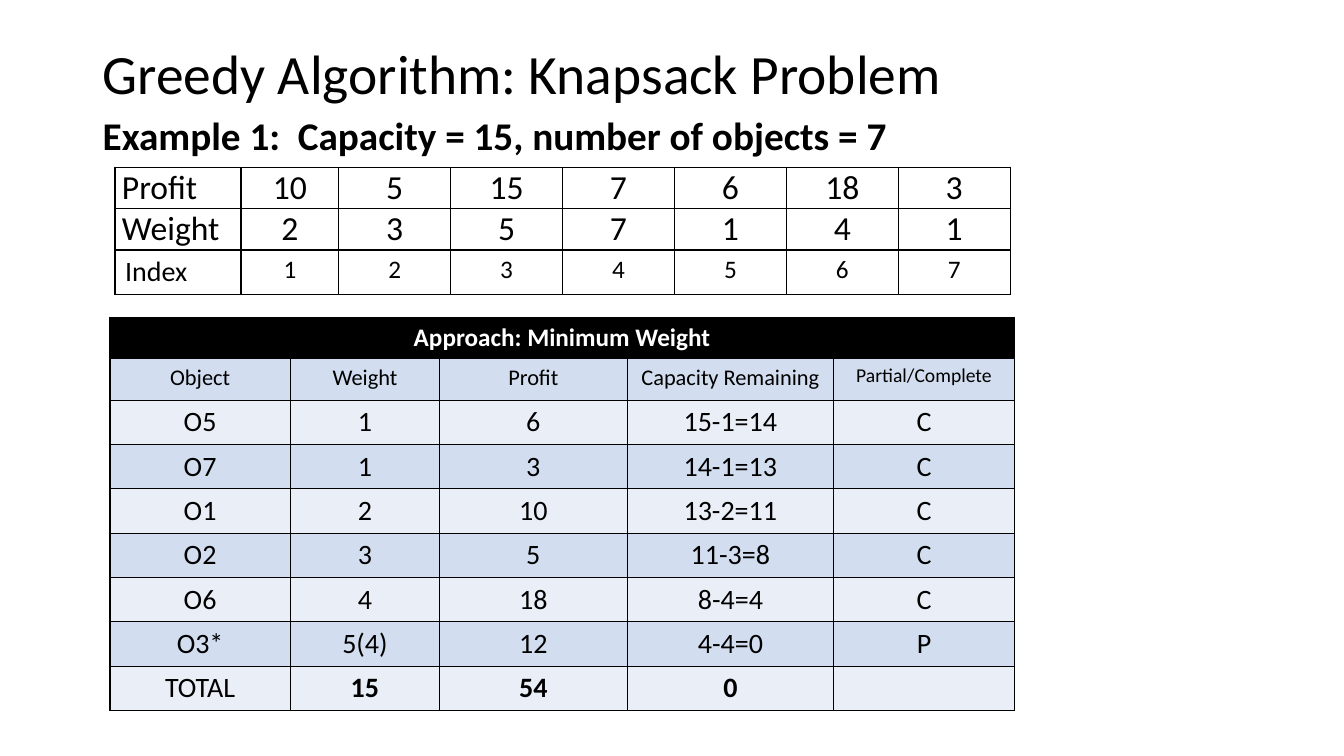
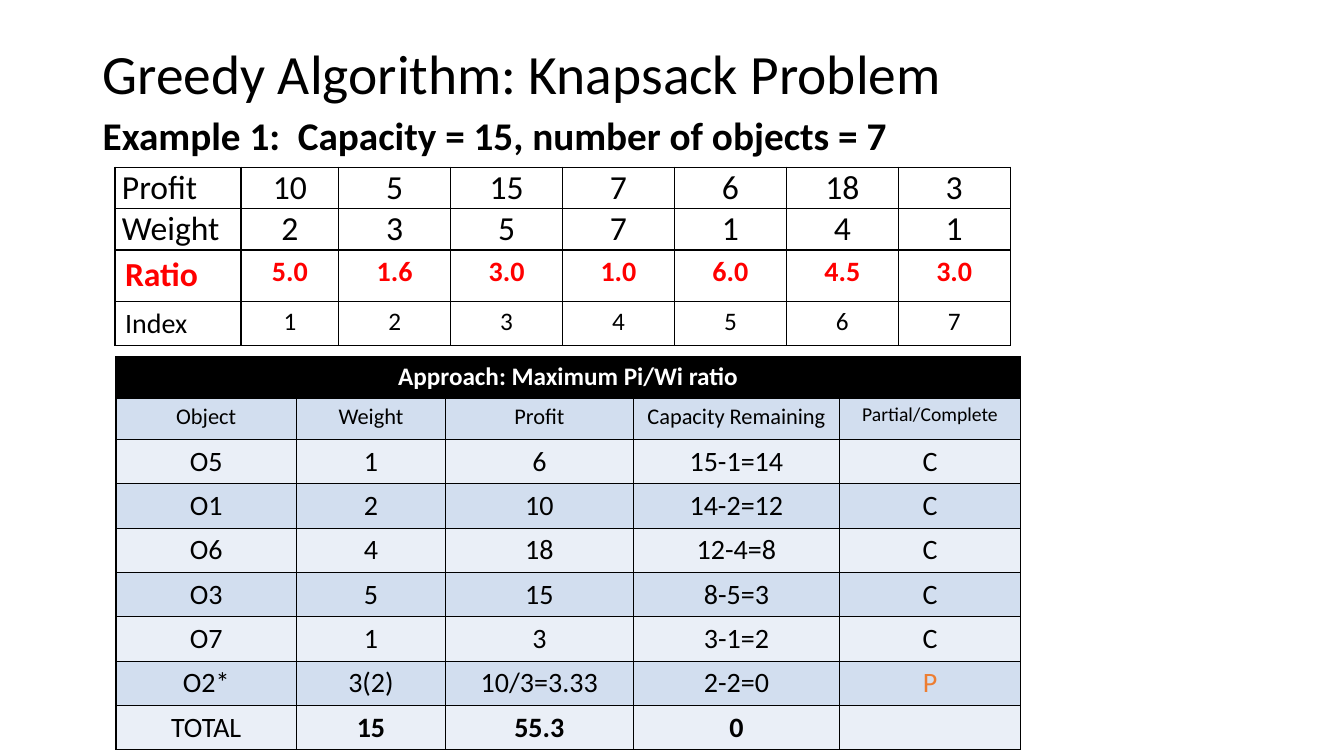
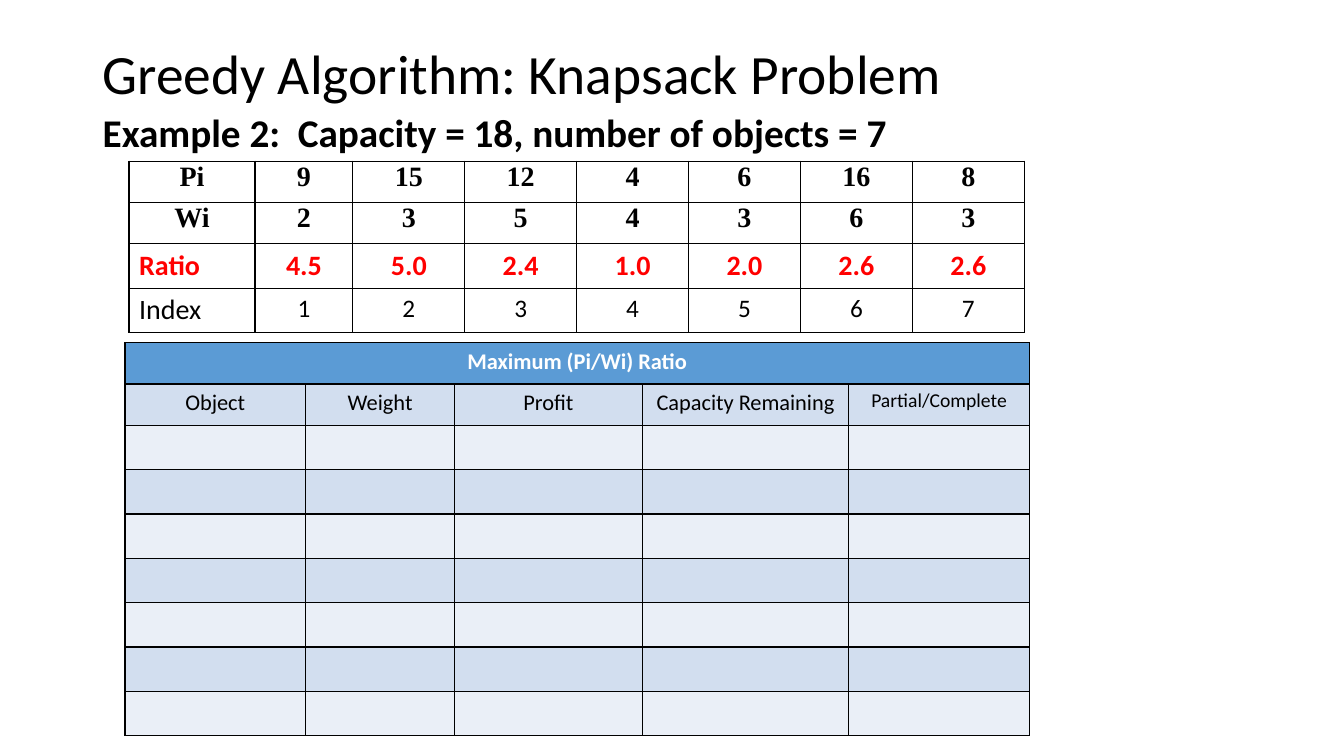
import pptx
import pptx.util
import pptx.dml.color
import pptx.enum.text
import pptx.oxml

Inches = pptx.util.Inches
ALIGN = pptx.enum.text.PP_ALIGN
HUE = {"ink": "000000", "white": "FFFFFF", "red": "FF0000", "blue": "5B9BD5",
       "orange": "ED7D31", "dark": "D2DEEF", "light": "EAEFF7"}
SANS, SERIF = "Calibri", "Times New Roman"
TITLE = "Greedy Algorithm: Knapsack Problem"
HEADS = ["Object", "Weight", "Profit", "Capacity Remaining", "Partial/Complete"]
INDEX = "Index 1 2 3 4 5 6 7"

# Column widths
DATA = [1.25, 0.97] + [1.11] * 6
STEPS = [1.79, 1.48, 1.86, 2.05, 1.79]

# Row styles: height, label size, value size, hue, bold, font, label align, tight
PLAIN = (0.41, 24, 24, "ink", False, SANS, ALIGN.JUSTIFY, True)
BOLD = (0.41, 20, 20, "ink", True, SERIF, ALIGN.CENTER, True)
RATIO = (0.51, 24, 20, "red", True, SANS, ALIGN.LEFT, False)
SMALL = (0.44, 20, 20, "red", True, SANS, ALIGN.LEFT, False)
COUNT = (0.44, 20, 18, "ink", False, SANS, ALIGN.LEFT, False)

# Each slide: example line, then the data table and the steps table
one = [(PLAIN, "Profit 10 5 15 7 6 18 3"), (PLAIN, "Weight 2 3 5 7 1 4 1")]
SLIDES = [
    {"text": "Example 1:  Capacity = 15, number of objects = 7", "top": 1.11,
     "data": (1.14, 1.66), "rows": one + [(COUNT, INDEX)],
     "steps": (1.09, 3.15), "head": ("Approach: Minimum Weight", 18, "ink"),
     "body": ["O5 1 6 15-1=14 C", "O7 1 3 14-1=13 C", "O1 2 10 13-2=11 C",
              "O2 3 5 11-3=8 C", "O6 4 18 8-4=4 C", "O3* 5(4) 12 4-4=0 P",
              "TOTAL 15 54 0"]},
    {"text": "Example 1:  Capacity = 15, number of objects = 7", "top": 1.11,
     "data": (1.14, 1.66),
     "rows": one + [(RATIO, "Ratio 5.0 1.6 3.0 1.0 6.0 4.5 3.0"), (COUNT, INDEX)],
     "steps": (1.15, 3.54), "head": ("Approach: Maximum Pi/Wi ratio", 18, "ink"),
     "mark": (7, 4),
     "body": ["O5 1 6 15-1=14 C", "O1 2 10 14-2=12 C", "O6 4 18 12-4=8 C",
              "O3 5 15 8-5=3 C", "O7 1 3 3-1=2 C", "O2* 3(2) 10/3=3.33 2-2=0 P",
              "TOTAL 15 55.3 0"]},
    {"text": "Example 2:  Capacity = 18, number of objects = 7", "top": 1.08,
     "data": (1.28, 1.6),
     "rows": [(BOLD, "Pi 9 15 12 4 6 16 8"), (BOLD, "Wi 2 3 5 4 3 6 3"),
              (SMALL, "Ratio 4.5 5.0 2.4 1.0 2.0 2.6 2.6"), (COUNT, INDEX)],
     "steps": (1.24, 3.4), "head": ("Maximum (Pi/Wi) Ratio", 16, "blue"),
     "body": [""] * 7},
]


def write(frame, text, size, hue="ink", bold=False, font=SANS, align=ALIGN.CENTER):
    frame.text = text
    para = frame.paragraphs[0]
    para.alignment = align
    for run in para.runs:
        run.font.size = pptx.util.Pt(size)
        run.font.name = font
        run.font.bold = bold
        run.font.color.rgb = pptx.dml.color.RGBColor.from_string(HUE[hue])
    return para


def grid(slide, place, cols, highs):
    left, top = place
    table = slide.shapes.add_table(
        len(highs), len(cols), Inches(left), Inches(top),
        Inches(sum(cols)), Inches(sum(highs))).table
    table.first_row = table.horz_banding = False
    for col, wide in zip(table.columns, cols):
        col.width = Inches(wide)
    for row, high in zip(table.rows, highs):
        row.height = Inches(high)
    # Thin black borders go before the fill
    for cell in table.iter_cells():
        props = cell._tc.get_or_add_tcPr()
        for side in ("lnL", "lnR", "lnT", "lnB"):
            props.append(pptx.oxml.parse_xml(
                f'<a:{side} xmlns:a="http://schemas.openxmlformats.org/drawingml/2006/main"'
                f' w="12700"><a:solidFill><a:srgbClr val="{HUE["ink"]}"/></a:solidFill></a:{side}>'))
        cell.fill.background()
    return table


deck = pptx.Presentation()
deck.slide_width, deck.slide_height = Inches(13.33), Inches(7.5)

for item in SLIDES:
    slide = deck.slides.add_slide(deck.slide_layouts[6])

    # Title and example line
    for text, top, high, size, bold in ((TITLE, 0.4, 0.71, 39.6, False),
                                        (item["text"], item["top"], 5.36, 28, True)):
        box = slide.shapes.add_textbox(Inches(0.92), Inches(top), Inches(11.5), Inches(high))
        frame = box.text_frame
        frame.word_wrap = True
        para = write(frame, text, size, bold=bold, align=ALIGN.LEFT)
        para.line_spacing = 0.9
        if text == TITLE:
            frame.vertical_anchor = pptx.enum.text.MSO_ANCHOR.MIDDLE
        else:
            para.space_before = pptx.util.Pt(10)

    # Data table
    table = grid(slide, item["data"], DATA, [style[0] for style, line in item["rows"]])
    for r, (style, line) in enumerate(item["rows"]):
        high, first, size, hue, bold, font, align, tight = style
        for c, text in enumerate(line.split()):
            cell = table.cell(r, c)
            if tight:
                cell.margin_left = cell.margin_right = Inches(0.07)
                cell.margin_top = cell.margin_bottom = 0
            write(cell.text_frame, text, size if c else first, hue, bold, font,
                  ALIGN.CENTER if c else align)

    # Steps table
    head, big, band = item["head"]
    lines = [[head], HEADS] + [line.split() for line in item["body"]]
    table = grid(slide, item["steps"], STEPS, [0.41] * 2 + [0.44] * 7)
    table.cell(0, 0).merge(table.cell(0, 4))
    for r, words in enumerate(lines):
        shade = band if r == 0 else "dark" if r % 2 else "light"
        for c in range(len(STEPS)):
            cell = table.cell(r, c)
            cell.fill.solid()
            cell.fill.fore_color.rgb = pptx.dml.color.RGBColor.from_string(HUE[shade])
            if c >= len(words):
                continue
            size = big if r == 0 else 20 if r > 1 else 14 if c == 4 else 16
            hue = "white" if r == 0 else "orange" if (r, c) == item.get("mark") else "ink"
            bold = r == 0 or (r == 8 and c > 0)
            write(cell.text_frame, words[c], size, hue, bold)

deck.save("out.pptx")
